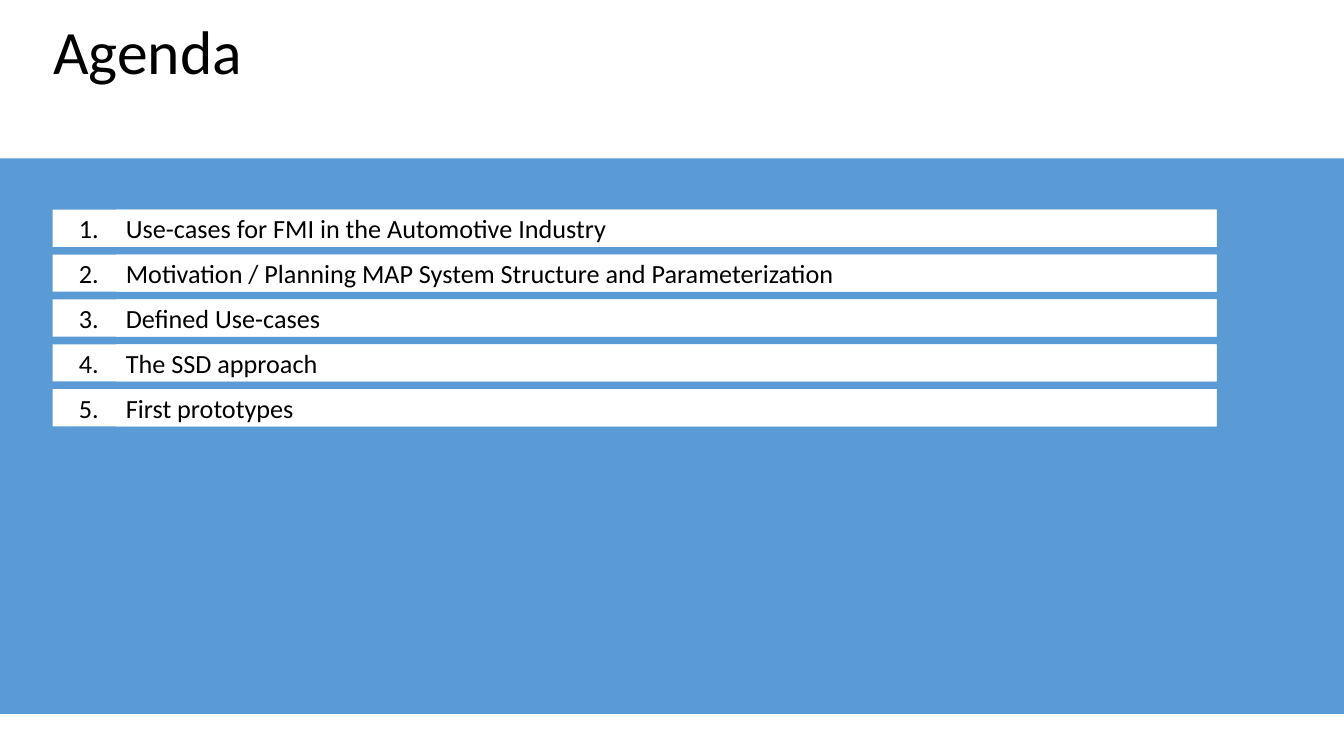
from dataclasses import dataclass

from pptx import Presentation
from pptx.dml.color import RGBColor
from pptx.enum.shapes import MSO_SHAPE as Preset
from pptx.enum.text import MSO_ANCHOR as Anchor, PP_ALIGN as Align
from pptx.util import Pt


@dataclass(frozen=True)
class Theme:
    font: str = "Calibri"
    text: str = "000000"
    panel: str = "5B9BD5"
    bar: str = "FFFFFF"
    title_size: float = 44
    item_size: float = 18.7


AGENDA = [
    "Use-cases for FMI in the Automotive Industry",
    "Motivation / Planning MAP System Structure and Parameterization",
    "Defined Use-cases",
    "The SSD approach",
    "First prototypes",
]

# Layout in points
SLIDE_WIDTH, SLIDE_HEIGHT = 960, 540
BAR_LEFT, BAR_TOP, BAR_WIDTH, BAR_HEIGHT = 37.5, 149.8, 831.5, 26.6
BAR_PITCH = 32.05
LABEL_OFFSET = 45.3


def set_all(target, values):
    for name, value in values.items():
        setattr(target, name, value)


class SlideBuilder:
    def __init__(self, slide, theme):
        self.slide = slide
        self.theme = theme

    def place(self, shape, left, top, width, height):
        set_all(shape, {"left": Pt(left), "top": Pt(top),
                        "width": Pt(width), "height": Pt(height)})

    def fill_text(self, shape, text, size, anchor, inset=0.0, line_spacing=1.0):
        frame = shape.text_frame
        frame.text = text
        set_all(frame, {"word_wrap": True, "vertical_anchor": anchor,
                        "margin_left": Pt(inset), "margin_right": 0,
                        "margin_top": 0, "margin_bottom": 0})
        paragraph = frame.paragraphs[0]
        set_all(paragraph, {"alignment": Align.LEFT, "line_spacing": line_spacing})
        font = paragraph.runs[0].font
        set_all(font, {"name": self.theme.font, "size": Pt(size)})
        font.color.rgb = RGBColor.from_string(self.theme.text)

    def title(self, text, *box):
        shape = self.slide.shapes.title
        self.place(shape, *box)
        self.fill_text(shape, text, self.theme.title_size, Anchor.TOP,
                       line_spacing=0.9)

    def rectangle(self, color, *box):
        shape = self.slide.shapes.add_shape(Preset.RECTANGLE, *map(Pt, box))
        shape.shadow.inherit = False
        shape.fill.solid()
        shape.fill.fore_color.rgb = RGBColor.from_string(color)
        shape.line.fill.background()
        return shape

    def bar(self, text, inset, *box):
        shape = self.rectangle(self.theme.bar, *box)
        self.fill_text(shape, text, self.theme.item_size, Anchor.MIDDLE, inset)


def main():
    presentation = Presentation()
    set_all(presentation, {"slide_width": Pt(SLIDE_WIDTH),
                           "slide_height": Pt(SLIDE_HEIGHT)})
    title_only = presentation.slide_layouts.get_by_name("Title Only")
    theme = Theme()
    builder = SlideBuilder(presentation.slides.add_slide(title_only), theme)

    # Heading and coloured panel
    builder.title("Agenda", 37.9, 15.1, 774.7, 62.6)
    builder.rectangle(theme.panel, 0, 113.2, SLIDE_WIDTH, 396.8)

    # Numbered agenda bars
    for index, topic in enumerate(AGENDA):
        top = BAR_TOP + index * BAR_PITCH
        builder.bar(f"{index + 1}.", 18.9, BAR_LEFT, top, BAR_WIDTH, BAR_HEIGHT)
        builder.bar(topic, 7.2, BAR_LEFT + LABEL_OFFSET, top,
                    BAR_WIDTH - LABEL_OFFSET, BAR_HEIGHT)

    presentation.save("out.pptx")


if __name__ == "__main__":
    main()
